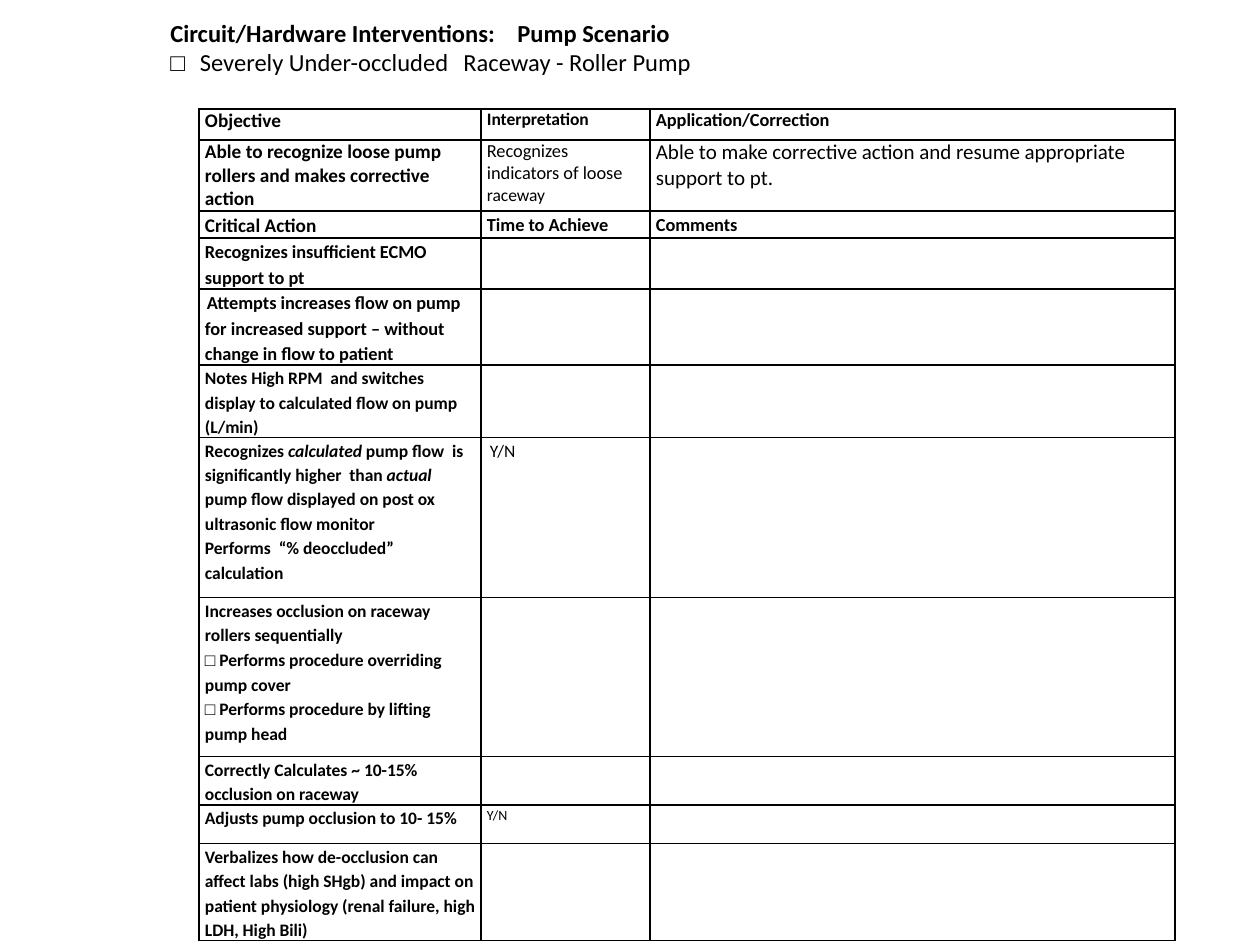
from lxml import etree
from pptx import Presentation
from pptx import util as u
from pptx.dml.color import RGBColor
from pptx.enum import text
from pptx.oxml.ns import qn

EMU_PER_PX = 914400 / 126
BLACK = "000000"
BODY, SYMBOL = "Calibri", "Courier New"


def px(n):
    return u.Emu(round(n * EMU_PER_PX))


def color(hex_value):
    return RGBColor.from_string(hex_value)


def para(*runs, size=10, bold=True, spacing=1.15, indent=0, tab=0):
    """Describe a paragraph; a run is plain text or (text, font changes)."""
    return dict(runs=runs, size=size, bold=bold, spacing=spacing,
                indent=indent, tab=tab)


def italic(words):
    return words, {"italic": True}


def symbol(words):
    return words, {"name": SYMBOL}


class Sheet:
    """The current slide and its text and border style."""

    def __init__(self, slide, ink=BLACK, border=1):
        self.slide = slide
        self.ink = ink
        self.border = u.Pt(border)

    def fill_text(self, frame, paragraphs):
        for i, item in enumerate(paragraphs):
            p = frame.paragraphs[0] if i == 0 else frame.add_paragraph()
            props = p._p.get_or_add_pPr()
            if item["indent"]:
                props.set("indent", str(px(item["indent"])))
            if item["tab"]:
                stops = etree.SubElement(props, qn("a:tabLst"))
                etree.SubElement(stops, qn("a:tab"),
                                 pos=str(px(item["tab"])), algn="l")
            p.line_spacing = item["spacing"]
            p.font.name = BODY
            p.font.size = u.Pt(item["size"])
            p.font.bold = item["bold"]
            p.font.color.rgb = color(self.ink)
            for part in item["runs"]:
                words, changes = (part, {}) if isinstance(part, str) else part
                run = p.add_run()
                run.text = words
                if "name" in changes:
                    run.font.name = changes["name"]
                if "italic" in changes:
                    run.font.italic = changes["italic"]
                if "size" in changes:
                    run.font.size = u.Pt(changes["size"])

    def textbox(self, x, y, w, h, paragraphs):
        frame = self.slide.shapes.add_textbox(px(x), px(y), px(w), px(h)).text_frame
        frame.word_wrap = True
        frame.auto_size = text.MSO_AUTO_SIZE.SHAPE_TO_FIT_TEXT
        frame.vertical_anchor = text.MSO_ANCHOR.MIDDLE
        self.fill_text(frame, paragraphs)

    def outline(self, cell):
        props = cell._tc.get_or_add_tcPr()
        for side in ("a:lnL", "a:lnR", "a:lnT", "a:lnB"):
            line = etree.SubElement(props, qn(side), w=str(self.border))
            fill = etree.SubElement(line, qn("a:solidFill"))
            etree.SubElement(fill, qn("a:srgbClr"), val=self.ink)

    def table(self, x, y, widths, rows):
        heights = [height for height, _ in rows]
        grid = self.slide.shapes.add_table(
            len(rows), len(widths), px(x), px(y),
            px(sum(widths)), px(sum(heights))).table
        grid.first_row = grid.horz_banding = False
        for column, width in zip(grid.columns, widths):
            column.width = px(width)
        for r, (height, contents) in enumerate(rows):
            grid.rows[r].height = px(height)
            for c in range(len(widths)):
                cell = grid.cell(r, c)
                cell.margin_left = cell.margin_right = px(6)
                cell.margin_top = cell.margin_bottom = 0
                self.outline(cell)
                cell.fill.background()
                self.fill_text(cell.text_frame,
                               contents[c] if c < len(contents) else [para()])


# Each row: height, then the paragraphs of its filled cells
ROWS = [
    (31, [[para("Objective", size=11, spacing=1.0)],
          [para("Interpretation", spacing=1.0)],
          [para("Application/Correction", size=10.5, spacing=1.0)]]),
    (71, [[para("Able to recognize loose pump rollers and makes corrective action",
                size=11, spacing=1.0)],
          [para("Recognizes indicators of loose ", ("raceway", {"size": 10}),
                size=10.5, bold=False, spacing=1.0)],
          [para("Able to make corrective action and resume appropriate support to pt.",
                size=12, bold=False, spacing=1.0)]]),
    (27, [[para("Critical Action", size=11)],
          [para("Time to Achieve", size=10.5)],
          [para("Comments", size=10.5)]]),
    (51, [[para("Recognizes insufficient ECMO support to pt", size=10.5)]]),
    (76, [[para("Attempts increases flow on pump for increased support – "
                "without change in flow to patient", size=10.5, indent=2)]]),
    (72, [[para("Notes High RPM  and switches display to calculated flow "
                "on pump (L/min)")]]),
    (160, [[para("Recognizes ", italic("calculated"),
                 " pump flow  is significantly higher  than ", italic("actual"),
                 " pump flow displayed on post ox ultrasonic flow monitor"),
            para("Performs  “% deoccluded” calculation")],
           [para("Y/N", bold=False, indent=3)]]),
    (159, [[para("Increases occlusion on raceway rollers sequentially"),
            para(symbol("□"), " Performs procedure overriding pump cover"),
            para(symbol("□"), " Performs procedure by lifting pump head")]]),
    (48, [[para("Correctly Calculates ~ 10-15% occlusion on raceway")]]),
    (39, [[para("Adjusts pump occlusion to 10- 15%")],
          [para("Y/N", size=8, bold=False)]]),
    (97, [[para("Verbalizes how de-occlusion can affect labs (high SHgb) and impact "
                "on patient physiology (renal failure, high LDH, High Bili)")]]),
]


def main():
    deck = Presentation()
    deck.slide_width, deck.slide_height = px(1260), px(945)
    sheet = Sheet(deck.slides.add_slide(deck.slide_layouts[6]))

    # Scenario heading
    sheet.textbox(158, 11, 735, 72, [
        para("Circuit/Hardware Interventions:\tPump Scenario",
             size=14, spacing=1.0, tab=347),
        para(symbol("□ "), "Severely Under-occluded", symbol(" "),
             "Raceway - Roller Pump", size=14, bold=False, spacing=1.0),
    ])

    # Assessment table
    sheet.table(199, 109, [282, 169, 525], ROWS)

    deck.save("out.pptx")


if __name__ == "__main__":
    main()
